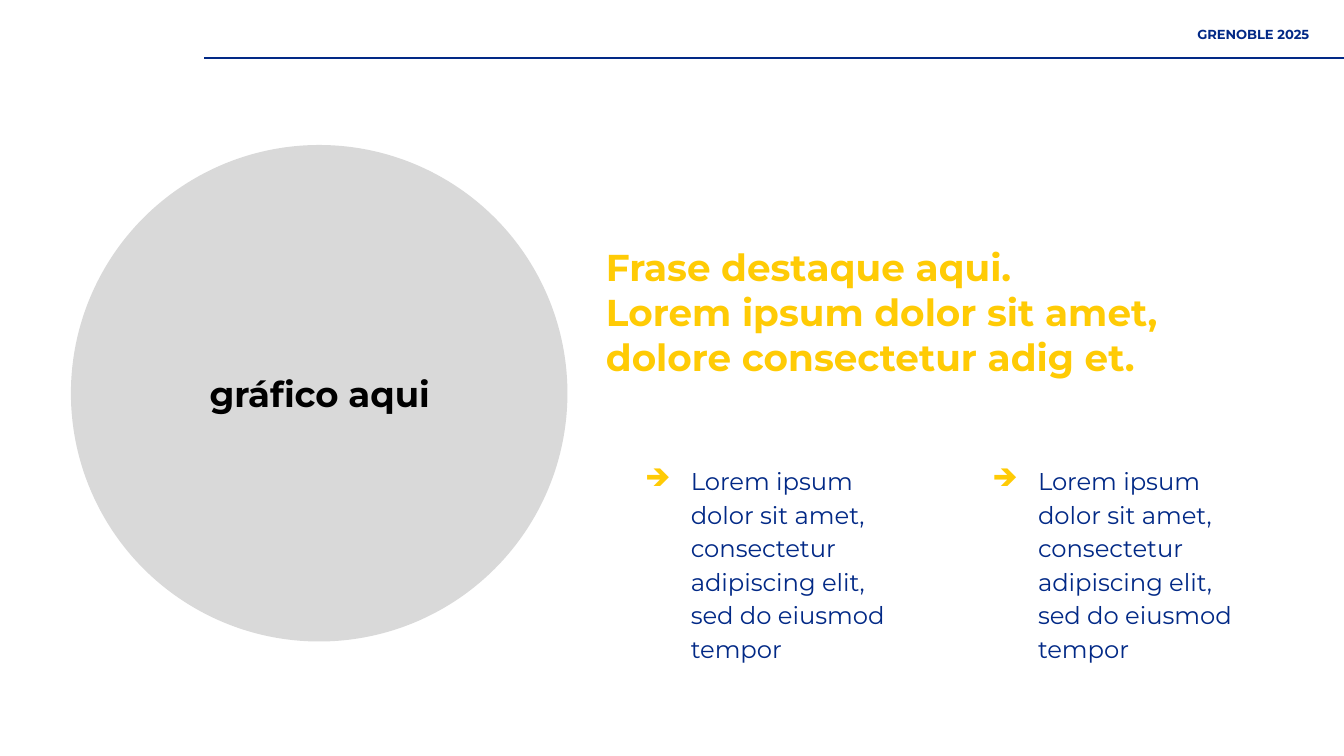
from dataclasses import dataclass

from lxml.etree import SubElement
from pptx import Presentation
from pptx.dml.color import RGBColor as RGB
from pptx.enum.shapes import MSO_CONNECTOR as Connector, MSO_SHAPE as Shape
from pptx.enum.text import MSO_ANCHOR as Anchor, PP_ALIGN as Align
from pptx.oxml.ns import qn
from pptx.util import Pt


@dataclass(frozen=True)
class Theme:
    font: str = "Montserrat"
    navy: str = "022986"
    yellow: str = "FFCB05"
    gray: str = "D9D9D9"
    black: str = "000000"
    header_size: float = 7
    body_size: float = 13
    label_size: float = 19
    headline_size: float = 20
    inset: float = 7.2


def add_bullet(paragraph, character, color, margin, hanging):
    properties = paragraph._p.get_or_add_pPr()
    properties.set("marL", str(Pt(margin)))
    properties.set("indent", str(-Pt(hanging)))
    bullet_color = SubElement(properties, qn("a:buClr"))
    SubElement(bullet_color, qn("a:srgbClr"), val=color)
    SubElement(properties, qn("a:buChar"), char=character)


def write_text(paragraph, text, *, font, size, color, bold=False,
               align=Align.LEFT, spacing=None, bullet=None):
    """Fill a paragraph; bullet holds character, color, margin and hanging."""
    if bullet:
        add_bullet(paragraph, **bullet)
    paragraph.alignment = align
    if spacing:
        paragraph.line_spacing = spacing
    run = paragraph.add_run()
    run.text = text
    run.font.name = font
    run.font.size = Pt(size)
    run.font.bold = bold
    run.font.color.rgb = RGB.from_string(color)


class SlideBuilder:
    def __init__(self, slide, theme):
        self.slide = slide
        self.theme = theme

    def circle(self, left, top, diameter, color):
        shape = self.slide.shapes.add_shape(
            Shape.OVAL, Pt(left), Pt(top), Pt(diameter), Pt(diameter))
        shape.shadow.inherit = False
        shape.fill.solid()
        shape.fill.fore_color.rgb = RGB.from_string(color)
        shape.line.fill.background()

    def rule(self, left, right, y, color):
        line = self.slide.shapes.add_connector(
            Connector.STRAIGHT, Pt(left), Pt(y), Pt(right), Pt(y))
        line.line.color.rgb = RGB.from_string(color)
        line.line.width = Pt(0.75)
        SubElement(line._element.spPr, qn("a:effectLst"))

    def text(self, left, top, width, height, *lines, side_inset=None, **style):
        box = self.slide.shapes.add_textbox(
            Pt(left), Pt(top), Pt(width), Pt(height))
        frame = box.text_frame
        frame.word_wrap = True
        frame.vertical_anchor = Anchor.TOP
        side = self.theme.inset if side_inset is None else side_inset
        frame.margin_left = frame.margin_right = Pt(side)
        frame.margin_top = frame.margin_bottom = Pt(self.theme.inset)
        for index, line in enumerate(lines):
            paragraph = frame.add_paragraph() if index else frame.paragraphs[0]
            write_text(paragraph, line, font=self.theme.font, **style)


def main():
    theme = Theme()
    presentation = Presentation()
    presentation.slide_width, presentation.slide_height = Pt(720), Pt(405)
    slide = presentation.slides.add_slide(presentation.slide_layouts[6])
    builder = SlideBuilder(slide, theme)

    builder.circle(38, 77.7, 266, theme.gray)
    builder.text(317.5, 123.8, 356.4, 160.6, "Frase destaque aqui.",
                 "Lorem ipsum dolor sit amet, dolore consectetur adig et.",
                 size=theme.headline_size, color=theme.yellow, bold=True)
    builder.text(75.6, 192.2, 191.5, 37.4, "gráfico aqui",
                 size=theme.label_size, color=theme.black, bold=True,
                 align=Align.CENTER)

    builder.rule(109.4, 720, 31.1, theme.navy)
    builder.text(477.4, 10.1, 223.9, 38.9, "GRENOBLE 2025", side_inset=0,
                 size=theme.header_size, color=theme.navy, bold=True,
                 align=Align.RIGHT)

    arrow = dict(character="➔", color=theme.yellow, margin=36, hanging=24.5)
    for column in range(2):
        builder.text(327 + column * 186, 240.5, 160.6, 139,
                     "Lorem ipsum dolor sit amet, consectetur adipiscing elit, "
                     "sed do eiusmod tempor",
                     size=theme.body_size, color=theme.navy, spacing=1.15,
                     bullet=arrow)

    presentation.save("out.pptx")


if __name__ == "__main__":
    main()
